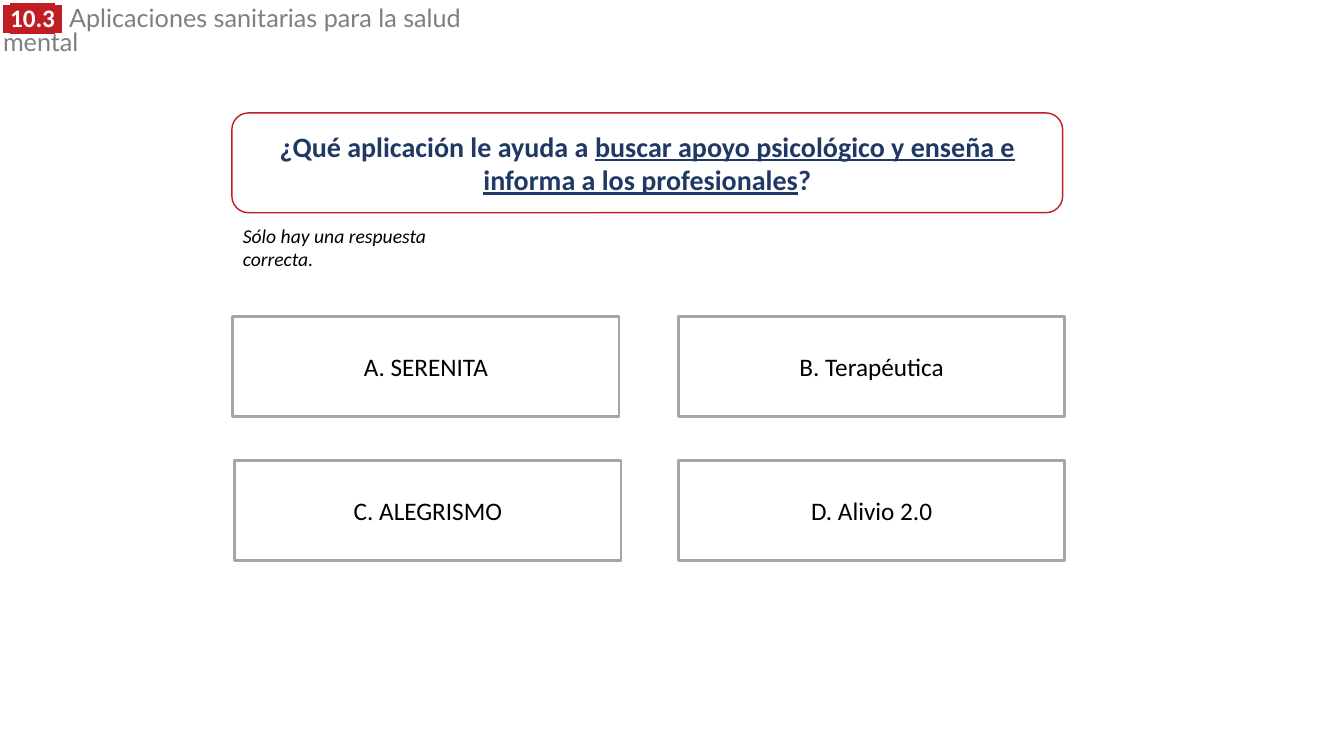
import pptx
import pptx.util
import pptx.dml.color
import pptx.enum.shapes
import pptx.enum.text
import pptx.oxml
import pptx.oxml.ns

Inches = pptx.util.Inches
RGBColor = pptx.dml.color.RGBColor
SHAPE = pptx.enum.shapes.MSO_SHAPE
ALIGN = pptx.enum.text.PP_ALIGN
ANCHOR = pptx.enum.text.MSO_ANCHOR
FIT = pptx.enum.text.MSO_AUTO_SIZE

WHITE = RGBColor(0xFF, 0xFF, 0xFF)
BLACK = RGBColor(0x00, 0x00, 0x00)
RED = RGBColor(0xC0, 0x1E, 0x24)
NAVY = RGBColor(0x20, 0x38, 0x64)
GRAY = RGBColor(0x7F, 0x7F, 0x7F)
SILVER = RGBColor(0xA5, 0xA5, 0xA5)


def style(run, size, color, face="Calibri", bold=False):
    run.font.size = pptx.util.Pt(size)
    run.font.color.rgb = color
    run.font.name = face
    run.font.bold = bold


def add_box(kind, left, top, width, edge, weight):
    box = slide.shapes.add_shape(kind, Inches(left), Inches(top), Inches(width), Inches(0.99))
    box.shadow.inherit = False
    box.fill.solid()
    box.fill.fore_color.rgb = WHITE
    box.line.color.rgb = edge
    box.line.width = pptx.util.Pt(weight)
    frame = box.text_frame
    frame.word_wrap = True
    frame.vertical_anchor = ANCHOR.MIDDLE
    frame.paragraphs[0].alignment = ALIGN.CENTER
    return box


deck = pptx.Presentation()
deck.slide_width = Inches(13.33)
deck.slide_height = Inches(7.5)
slide = deck.slides.add_slide(deck.slide_layouts[5])

title = slide.shapes.title
title.left, title.top = Inches(-0.07), Inches(0.03)
title.width, title.height = Inches(5.51), Inches(0.34)
frame = title.text_frame
frame.word_wrap = True
frame.auto_size = FIT.SHAPE_TO_FIT_TEXT
frame.vertical_anchor = ANCHOR.TOP
para = frame.paragraphs[0]
para.alignment = ALIGN.LEFT
para.line_spacing = 0.8
for text, face, badge in [
    (" ", "Arial", True),
    ("10.3", "Calibri", True),
    (" ", "Arial", True),
    (" ", "Arial", False),
    ("Aplicaciones sanitarias para la salud mental", "Lato", False),
]:
    run = para.add_run()
    run.text = text
    style(run, 18, WHITE if badge else GRAY, face, badge)
    if badge:
        mark = pptx.oxml.parse_xml(
            f'<a:highlight {pptx.oxml.ns.nsdecls("a")}><a:srgbClr val="{RED}"/></a:highlight>'
        )
        run.font.fill._xPr.find(pptx.oxml.ns.qn("a:solidFill")).addnext(mark)

ask = add_box(SHAPE.ROUNDED_RECTANGLE, 2.3, 1.12, 8.24, RED, 1)
for text, under in [
    ("¿Qué aplicación le ayuda a ", False),
    ("buscar apoyo psicológico y enseña e informa a los profesionales", True),
    ("?", False),
]:
    run = ask.text_frame.paragraphs[0].add_run()
    run.text = text
    style(run, 20, NAVY, bold=True)
    run.font.underline = under

hint = slide.shapes.add_textbox(Inches(2.31), Inches(2.17), Inches(2.36), Inches(0.57))
frame = hint.text_frame
frame.word_wrap = True
frame.auto_size = FIT.SHAPE_TO_FIT_TEXT
frame.text = "Sólo hay una respuesta correcta."
run = frame.paragraphs[0].runs[0]
style(run, 14, BLACK)
run.font.italic = True

for text, left, top in [
    ("A. SERENITA", 2.31, 3.14),
    ("B. Terapéutica", 6.73, 3.14),
    ("C. ALEGRISMO", 2.33, 4.57),
    ("D. Alivio 2.0", 6.73, 4.57),
]:
    para = add_box(SHAPE.RECTANGLE, left, top, 3.83, SILVER, 2).text_frame.paragraphs[0]
    para.text = text
    style(para.runs[0], 18, BLACK)

deck.save("out.pptx")
